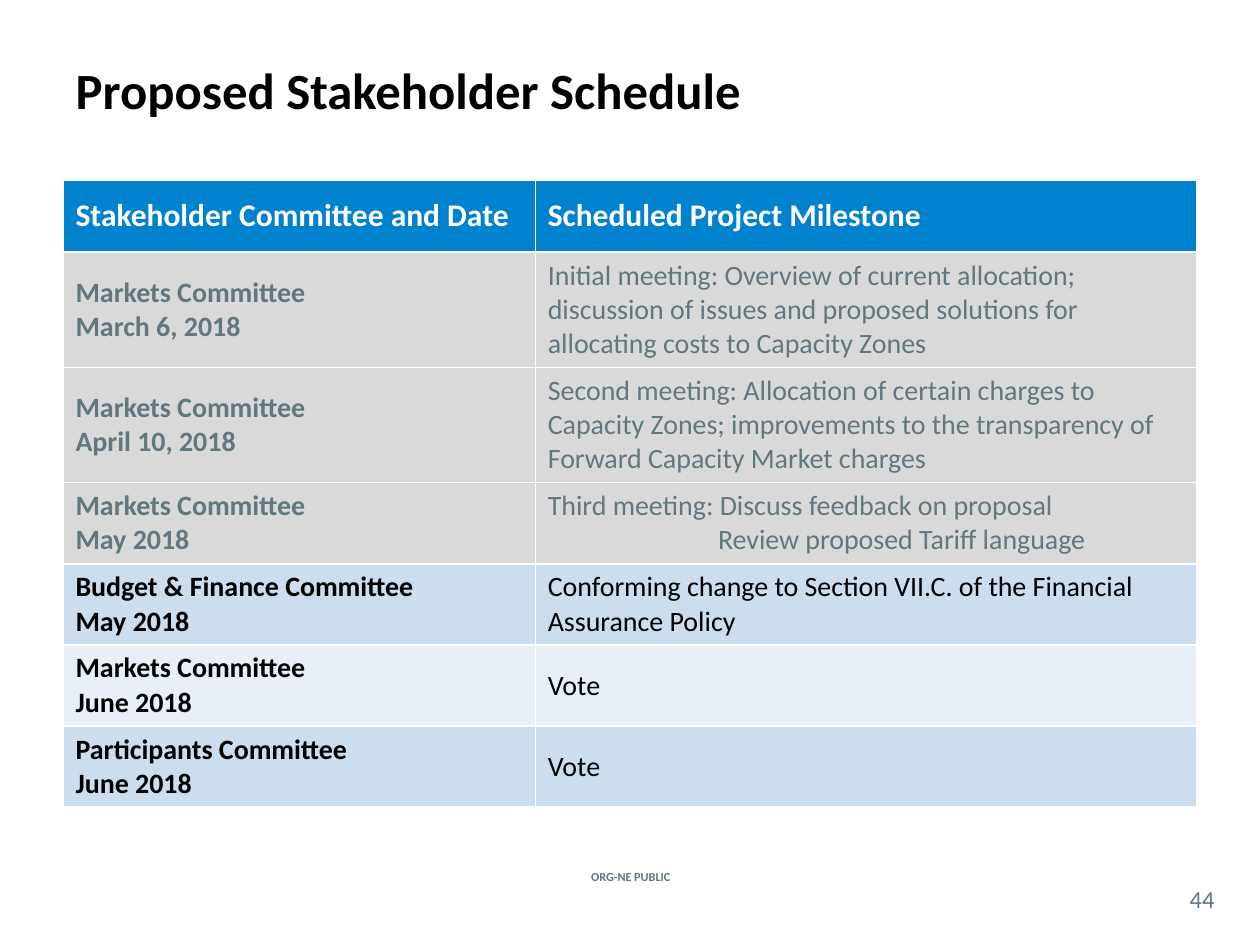
from lxml.etree import SubElement
from pptx import Presentation
from pptx.dml.color import RGBColor
from pptx.enum.text import MSO_ANCHOR, PP_ALIGN
from pptx.oxml.ns import qn
from pptx.util import Cm, Pt

INK = {"blue": "0082CF", "gray": "D9D9D9", "sky": "CCDDEE", "pale": "E8EFF7",
       "slate": "62777F", "black": "000000", "white": "FFFFFF"}
TITLE = "Proposed Stakeholder Schedule"
ROWS = [
    ("Stakeholder Committee and Date", "Scheduled Project Milestone",
     "blue", "white", 1.45),
    ("Markets Committee\nMarch 6, 2018",
     "Initial meeting: Overview of current allocation; discussion of issues "
     "and proposed solutions for allocating costs to Capacity Zones",
     "gray", "slate", 2.24),
    ("Markets Committee\nApril 10, 2018",
     "Second meeting: Allocation of certain charges to Capacity Zones; "
     "improvements to the transparency of Forward Capacity Market charges",
     "gray", "slate", 2.24),
    ("Markets Committee\nMay 2018",
     "Third meeting: Discuss feedback on proposal\n"
     "Review proposed Tariff language", "gray", "slate", 1.57),
    ("Budget & Finance Committee\nMay 2018",
     "Conforming change to Section VII.C. of the Financial Assurance Policy",
     "sky", "black", 1.57),
    ("Markets Committee\nJune 2018", "Vote", "pale", "black", 1.57),
    ("Participants Committee\nJune 2018", "Vote", "sky", "black", 1.57),
]
COLS = (9.52, 13.34)
LEFT, TOP, WIDE = 1.27, 3.63, sum(COLS)
NOTES = [
    ("ORG-NE PUBLIC", (10.85, 17.45, 3.73, 0.43), 7, True),
    ("44", (23.7, 17.8, 1.07, 0.64), 14, False),
]


def rgb(name):
    """Return the colour of a palette name."""
    return RGBColor.from_string(INK[name])


def assign(obj, values):
    """Set attributes from a dict."""
    for key, value in values.items():
        setattr(obj, key, value)


def style(frame, size, ink, bold, align=PP_ALIGN.LEFT):
    """Format every paragraph of a text frame."""
    for para in frame.paragraphs:
        para.alignment = align
        assign(para.font, {"name": "Calibri", "size": Pt(size), "bold": bold})
        para.font.color.rgb = rgb(ink)


def edge(cell):
    """Draw thin white borders round a cell."""
    props = cell._tc.get_or_add_tcPr()
    for side in ("lnL", "lnR", "lnT", "lnB"):
        line = SubElement(props, qn(f"a:{side}"), w=str(Pt(1)))
        fill = SubElement(line, qn("a:solidFill"))
        SubElement(fill, qn("a:srgbClr"), val=INK["white"])


def add_grid(slide):
    """Add the schedule table."""
    high = sum(row[-1] for row in ROWS)
    grid = slide.shapes.add_table(len(ROWS), len(COLS), Cm(LEFT), Cm(TOP),
                                  Cm(WIDE), Cm(high)).table
    for col, wide in zip(grid.columns, COLS):
        col.width = Cm(wide)
    for r, (*texts, fill, ink, tall) in enumerate(ROWS):
        grid.rows[r].height = Cm(tall)
        for c, text in enumerate(texts):
            cell = grid.cell(r, c)
            assign(cell, {"text": text, "vertical_anchor": MSO_ANCHOR.MIDDLE})
            edge(cell)
            cell.fill.solid()
            cell.fill.fore_color.rgb = rgb(fill)
            style(cell.text_frame, 16 if r else 18, ink, r == 0 or c == 0)
            if c:
                for para in cell.text_frame.paragraphs[1:]:
                    para._p.get_or_add_pPr().set("marL", str(Cm(3.43)))


def add_note(slide, text, place, size, bold):
    """Add a small centred label."""
    frame = slide.shapes.add_textbox(*map(Cm, place)).text_frame
    assign(frame, {"text": text, "word_wrap": True,
                   "vertical_anchor": MSO_ANCHOR.MIDDLE,
                   "margin_left": 0, "margin_right": 0,
                   "margin_top": 0, "margin_bottom": 0})
    style(frame, size, "slate", bold, PP_ALIGN.CENTER)


def main():
    """Build the schedule slide."""
    deck = Presentation()
    assign(deck, {"slide_width": Cm(25.4), "slide_height": Cm(19.05)})
    slide = deck.slides.add_slide(deck.slide_layouts[5])
    title = slide.shapes.title
    assign(title, {"left": Cm(LEFT), "top": Cm(0.2),
                   "width": Cm(WIDE), "height": Cm(3.18)})
    assign(title.text_frame, {"text": TITLE, "word_wrap": True,
                              "vertical_anchor": MSO_ANCHOR.MIDDLE})
    style(title.text_frame, 29, "black", True)
    add_grid(slide)
    for note in NOTES:
        add_note(slide, *note)
    deck.save("out.pptx")


if __name__ == "__main__":
    main()
